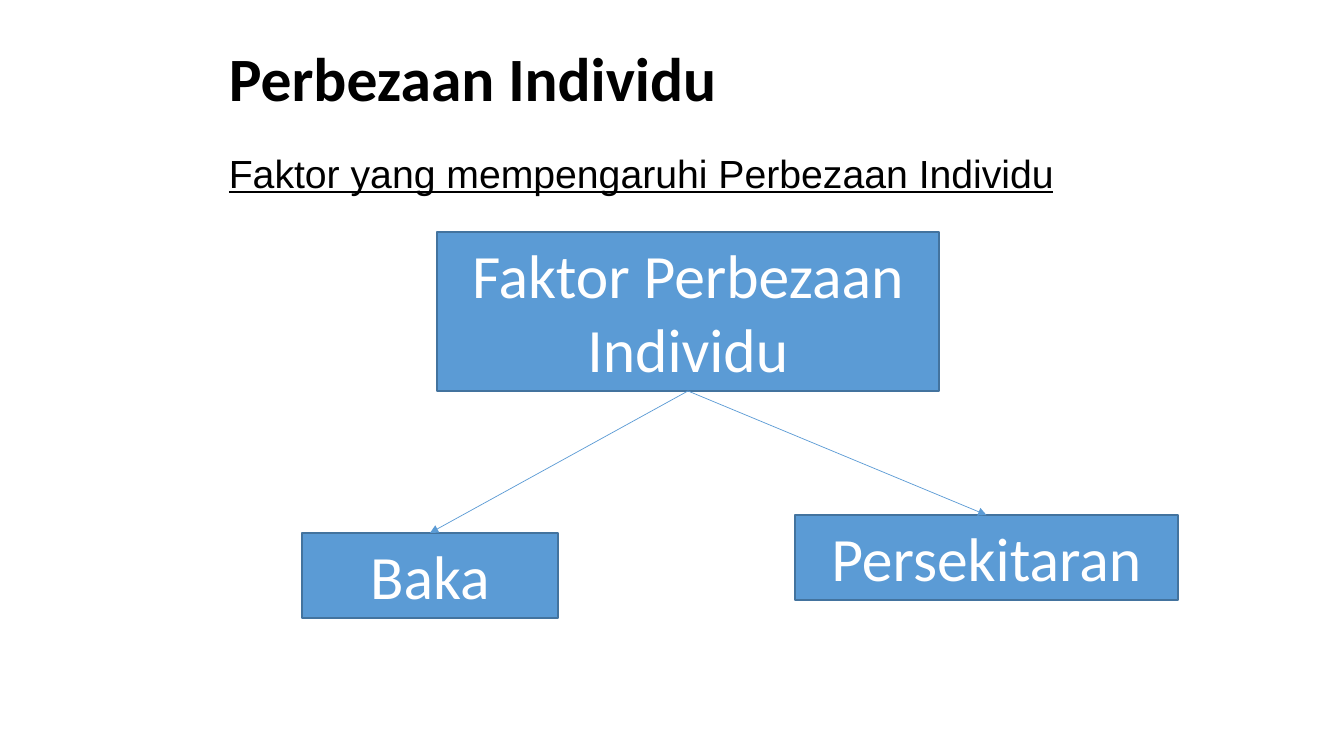
from dataclasses import dataclass, field

from pptx import Presentation
from pptx.dml.color import RGBColor
from pptx.enum.shapes import MSO_CONNECTOR as Connector, MSO_SHAPE as Shape
from pptx.enum.text import MSO_ANCHOR as Anchor, MSO_AUTO_SIZE as AutoSize, PP_ALIGN as Align
from pptx.oxml.ns import qn
from pptx.shapes.autoshape import Shape as AutoShape
from pptx.slide import Slide
from pptx.util import Emu, Pt
from lxml import etree

EMU_PER_PX = 914400 / 100.8
BLACK = RGBColor(0x00, 0x00, 0x00)
WHITE = RGBColor(0xFF, 0xFF, 0xFF)
BLUE = RGBColor(0x5B, 0x9B, 0xD5)
DARK_BLUE = RGBColor(0x43, 0x73, 0x9E)
BOTTOM_SITE, TOP_SITE = 2, 0


@dataclass
class Block:
    text: str
    left: int
    top: int
    width: int
    height: int
    font: dict = field(default_factory=dict)
    paragraph: dict = field(default_factory=dict)
    frame: dict = field(default_factory=dict)


def px(length: int) -> Emu:
    return Emu(round(length * EMU_PER_PX))


def bounds(block: Block) -> tuple[Emu, ...]:
    return tuple(px(n) for n in (block.left, block.top, block.width, block.height))


def apply_format(target: object, values: dict) -> None:
    for name, value in values.items():
        setattr(target, name, value)


def write_text(shape: AutoShape, block: Block, color: RGBColor) -> None:
    frame = shape.text_frame
    apply_format(frame, {"word_wrap": True} | block.frame)
    paragraph = frame.paragraphs[0]
    run = paragraph.add_run()
    run.text = block.text
    apply_format(paragraph, block.paragraph)
    apply_format(run.font, block.font)
    run.font.color.rgb = color


def add_heading(slide: Slide, block: Block) -> None:
    write_text(slide.shapes.add_textbox(*bounds(block)), block, BLACK)


def add_factor(slide: Slide, block: Block) -> AutoShape:
    shape = slide.shapes.add_shape(Shape.RECTANGLE, *bounds(block))
    shape.shadow.inherit = False
    shape.fill.solid()
    shape.fill.fore_color.rgb = BLUE
    shape.line.color.rgb = DARK_BLUE
    shape.line.width = Pt(1)
    write_text(shape, block, WHITE)
    return shape


def add_arrow(slide: Slide, source: AutoShape, target: AutoShape) -> None:
    arrow = slide.shapes.add_connector(Connector.STRAIGHT, 0, 0, 0, 0)
    arrow.begin_connect(source, BOTTOM_SITE)
    arrow.end_connect(target, TOP_SITE)
    arrow.line.color.rgb = BLUE
    arrow.line.width = Pt(0.5)
    properties = arrow._element.spPr
    etree.SubElement(properties.find(qn("a:ln")), qn("a:tailEnd"), type="triangle")
    etree.SubElement(properties, qn("a:effectLst"))


HEADINGS = [
    Block("Perbezaan Individu", 219, 40, 1033, 83,
          font={"name": "Calibri", "size": Pt(44), "bold": True},
          paragraph={"line_spacing": 0.9},
          frame={"vertical_anchor": Anchor.MIDDLE}),
    Block("Faktor yang mempengaruhi Perbezaan Individu", 219, 144, 1033, 536,
          font={"name": "Arial", "size": Pt(28), "underline": True},
          paragraph={"alignment": Align.JUSTIFY},
          frame={"vertical_anchor": Anchor.TOP}),
]

FACTOR_STYLE = {
    "font": {"name": "Calibri", "size": Pt(44)},
    "paragraph": {"alignment": Align.CENTER},
    "frame": {"vertical_anchor": Anchor.TOP, "auto_size": AutoSize.SHAPE_TO_FIT_TEXT},
}
CAUSES = [
    Block("Baka", 302, 533, 256, 85, **FACTOR_STYLE),
    Block("Persekitaran", 795, 515, 383, 85, **FACTOR_STYLE),
]
ROOT = Block("Faktor Perbezaan Individu", 437, 232, 502, 159, **FACTOR_STYLE)


def main() -> None:
    presentation = Presentation()
    presentation.slide_width, presentation.slide_height = px(1344), px(756)
    slide = presentation.slides.add_slide(presentation.slide_layouts[6])

    # Title and subtitle
    for heading in HEADINGS:
        add_heading(slide, heading)

    # Factor tree
    causes = [add_factor(slide, cause) for cause in CAUSES]
    root = add_factor(slide, ROOT)
    for cause in causes:
        add_arrow(slide, root, cause)

    presentation.save("out.pptx")


if __name__ == "__main__":
    main()
